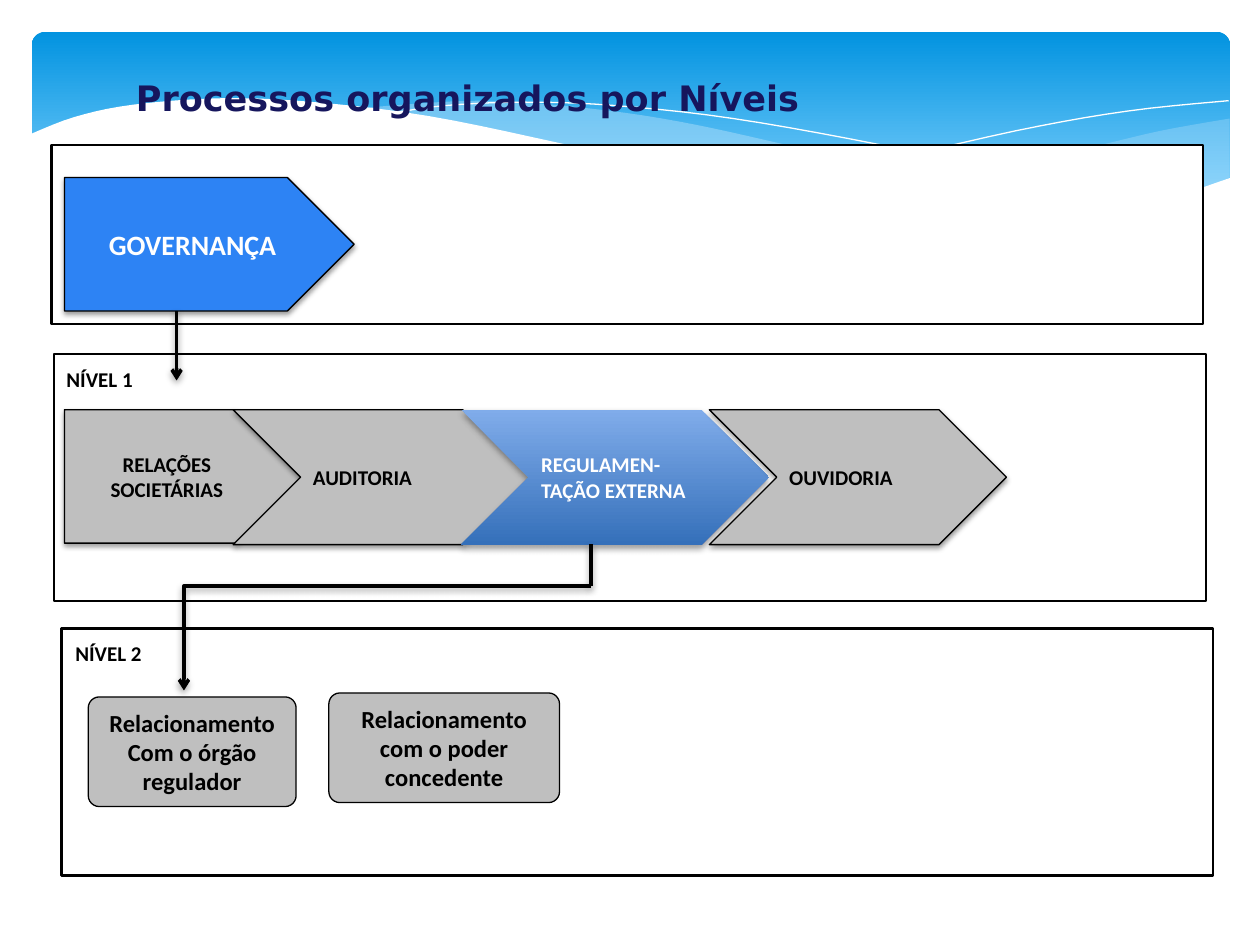
"""Build the slide of processes organised by levels."""
from dataclasses import dataclass
from typing import Optional

import lxml.etree
import pptx
import pptx.dml.color
import pptx.enum.shapes
import pptx.enum.text
import pptx.oxml.ns
import pptx.util

Cm = pptx.util.Cm
Pt = pptx.util.Pt
RGBColor = pptx.dml.color.RGBColor
MSO_SHAPE = pptx.enum.shapes.MSO_SHAPE
MSO_CONNECTOR = pptx.enum.shapes.MSO_CONNECTOR
PP_ALIGN = pptx.enum.text.PP_ALIGN
MSO_ANCHOR = pptx.enum.text.MSO_ANCHOR
qn = pptx.oxml.ns.qn

BLACK = RGBColor(0x00, 0x00, 0x00)
WHITE = RGBColor(0xFF, 0xFF, 0xFF)
GRAY = RGBColor(0xBF, 0xBF, 0xBF)
BLUE = RGBColor(0x2D, 0x83, 0xF4)
NAVY = RGBColor(0x16, 0x16, 0x5D)
FOAM = RGBColor(0xC6, 0xE7, 0xFC)
SKY = (RGBColor(0x02, 0x93, 0xE0), RGBColor(0x83, 0xD3, 0xFE))
STEEL = (RGBColor(0x80, 0xAC, 0xEA), RGBColor(0x35, 0x70, 0xBA))

Point = tuple[float, float]
Box = tuple[float, float, float, float]


@dataclass
class Wave:
    curves: list[list[Point]]
    fill: Optional[RGBColor] = None
    opacity: int = 100
    corners: tuple[Point, ...] = ()


@dataclass
class Block:
    kind: int
    box: Box
    fill: object
    text: str = ""
    size: float = 12
    color: RGBColor = BLACK
    align: int = PP_ALIGN.CENTER
    line: Optional[float] = 0.75
    shadow: Optional[tuple[float, float]] = None
    adj: Optional[float] = None
    stop: float = 1.0


@dataclass
class Label:
    box: Box
    text: str
    size: float = 12
    font: str = "Calibri"
    color: RGBColor = BLACK


@dataclass
class Link:
    start: Point
    end: Point
    arrow: bool = True
    kind: int = MSO_CONNECTOR.STRAIGHT


SOFT = (3.1, 1.6)
DEEP = (4, 2)
PANEL, PLATE, CHEVRON, ROUND = (
    MSO_SHAPE.RECTANGLE, MSO_SHAPE.PENTAGON, MSO_SHAPE.CHEVRON, MSO_SHAPE.ROUNDED_RECTANGLE)

BAND = Block(ROUND, (0.64, 0.64, 24.16, 3.96), SKY, line=None, adj=0.07, stop=0.9)
WAVES = [
    Wave([[(24.79, 2.39), (23.39, 2.64), (21.87, 3), (19.13, 3.63), (16.79, 4.06)],
          [(16.79, 4.06), (18.26, 4.24), (19.84, 4.37), (21.44, 4.34), (22.78, 4.19),
           (23.93, 3.91), (24.79, 3.58)]], FOAM, 29),
    Wave([[(22.68, 4.24), (20.5, 3.91), (17.93, 3.4), (15.98, 2.95), (13.74, 2.46),
           (11.81, 2.18), (9.65, 2.03), (7.26, 2.18)],
          [(7.26, 2.18), (9.19, 2.46), (11.4, 2.95), (14.38, 3.63), (16.51, 4.01),
           (18.69, 4.29), (20.78, 4.39), (22.68, 4.24)]], FOAM, 40),
    Wave([[(7.85, 2.29), (8.97, 2.13), (10.57, 2.06), (12.42, 2.13), (14.78, 2.39),
           (17.65, 2.9), (20.19, 3.45), (23.04, 4.22)]]),
    Wave([[(15.57, 3.84), (17.65, 3.3), (20.47, 2.64), (22.73, 2.24), (24.77, 2.03)]]),
    Wave([[(24.82, 3.58), (23.37, 4.04), (21.59, 4.32), (19.76, 4.32), (17.48, 4.11),
           (14.71, 3.66), (11.35, 2.9), (8.64, 2.34), (6.35, 2.06), (4.5, 1.98),
           (2.69, 2.11), (1.5, 2.36), (0.58, 2.72)]], WHITE,
         corners=((0.58, 5.69), (24.82, 5.69))),
]
BLOCKS = [
    Block(PANEL, (1.04, 2.92, 23.22, 3.61), WHITE, line=1.25),
    Block(PANEL, (1.09, 7.14, 23.22, 4.98), WHITE, line=1.25),
    Block(PANEL, (1.24, 12.67, 23.22, 4.98), WHITE, line=1.25),
    Block(PLATE, (1.3, 3.58, 5.84, 2.69), BLUE, "GOVERNANÇA", 16, WHITE, shadow=SOFT),
    Block(PLATE, (1.3, 8.26, 4.8, 2.69), GRAY, "RELAÇÕES SOCIETÁRIAS", shadow=SOFT),
    Block(CHEVRON, (4.7, 8.26, 5.99, 2.72), GRAY, "AUDITORIA",
          align=PP_ALIGN.LEFT, shadow=SOFT),
    Block(CHEVRON, (9.3, 8.26, 6.2, 2.72), STEEL, "REGULAMEN-TAÇÃO EXTERNA",
          color=WHITE, align=PP_ALIGN.LEFT, line=None, shadow=DEEP),
    Block(CHEVRON, (14.3, 8.26, 5.99, 2.72), GRAY, "OUVIDORIA",
          align=PP_ALIGN.LEFT, shadow=SOFT),
    Block(ROUND, (1.78, 14.05, 4.19, 2.21), GRAY,
          "Relacionamento\nCom o órgão\nregulador", 14, adj=0.1),
    Block(ROUND, (6.63, 13.97, 4.65, 2.21), GRAY,
          "Relacionamento com o poder concedente", 14, adj=0.1),
]
LABELS = [
    Label((2.49, 1.42, 19.99, 1.12), "Processos organizados por Níveis", 20, "DejaVu Sans", NAVY),
    Label((1.09, 7.26, 2.41, 0.76), "NÍVEL 1"),
    Label((1.27, 12.78, 2.41, 0.76), "NÍVEL 2"),
]
LINKS = [
    Link((11.91, 11.81), (3.71, 13.92), kind=MSO_CONNECTOR.ELBOW),
    Link((3.56, 6.27), (3.56, 7.67)),
    Link((11.91, 10.97), (11.91, 11.81), arrow=False),
]


def add_child(parent, tag: str, **attrs):
    """Append a DrawingML element."""
    return lxml.etree.SubElement(parent, qn(tag), {k: str(v) for k, v in attrs.items()})


def add_shadow(effects, blur: float, dist: float) -> None:
    """Put a downward black shadow in an effect list."""
    outer = add_child(effects, "a:outerShdw", blurRad=Pt(blur), dist=Pt(dist),
                      dir=5400000, rotWithShape=0)
    add_child(add_child(outer, "a:srgbClr", val=BLACK), "a:alpha", val=38000)


def smooth(knots: list[Point], steps: int = 5) -> list[Point]:
    """Sample a Catmull-Rom curve through the knots."""
    ends = [knots[0], *knots, knots[-1]]
    points = [knots[0]]
    for a, b, c, d in zip(ends, ends[1:], ends[2:], ends[3:]):
        for t in (i / steps for i in range(1, steps + 1)):
            points.append(tuple(
                (2 * q + (r - p) * t + (2 * p - 5 * q + 4 * r - s) * t ** 2
                 + (3 * q - p - 3 * r + s) * t ** 3) / 2
                for p, q, r, s in zip(a, b, c, d)))
    return points


def draw_wave(s, wave: Wave) -> None:
    """Draw a filled wave, or a white hairline when it has no fill."""
    points = [p for curve in wave.curves for p in smooth(curve)] + list(wave.corners)
    first, *rest = [(Cm(x), Cm(y)) for x, y in points]
    builder = s.shapes.build_freeform(*first)
    builder.add_line_segments(rest, close=wave.fill is not None)
    sp = builder.convert_to_shape()
    sp.shadow.inherit = False
    if wave.fill is None:
        sp.fill.background()
        sp.line.color.rgb = WHITE
        sp.line.width = Pt(0)
        return
    sp.fill.solid()
    sp.fill.fore_color.rgb = wave.fill
    sp.line.fill.background()
    if wave.opacity < 100:
        color = sp.element.spPr.find(qn("a:solidFill")).find(qn("a:srgbClr"))
        add_child(color, "a:alpha", val=wave.opacity * 1000)


def set_text(tf, text: str, size: float, font: str, color: RGBColor, align: int) -> None:
    """Fill a text frame with bold text."""
    tf.word_wrap = True
    tf.text = text
    for p in tf.paragraphs:
        p.alignment = align
        for r in p.runs:
            r.font.size, r.font.name, r.font.bold = Pt(size), font, True
            r.font.color.rgb = color


def draw_block(s, block: Block) -> None:
    """Draw a preset shape with its fill, outline, shadow and text."""
    sp = s.shapes.add_shape(block.kind, *map(Cm, block.box))
    sp.shadow.inherit = False
    if block.adj is not None:
        sp.adjustments[0] = block.adj
    if isinstance(block.fill, RGBColor):
        sp.fill.solid()
        sp.fill.fore_color.rgb = block.fill
    else:
        sp.fill.gradient()
        sp.fill.gradient_angle = 270
        for stop, color, position in zip(sp.fill.gradient_stops, block.fill, (0, block.stop)):
            stop.color.rgb, stop.position = color, position
    if block.line is None:
        sp.line.fill.background()
    else:
        sp.line.color.rgb, sp.line.width = BLACK, Pt(block.line)
    if block.shadow:
        add_shadow(sp.element.spPr.find(qn("a:effectLst")), *block.shadow)
    if block.text:
        sp.text_frame.vertical_anchor = MSO_ANCHOR.MIDDLE
        set_text(sp.text_frame, block.text, block.size, "Calibri", block.color, block.align)


def draw_label(s, label: Label) -> None:
    """Draw a text box."""
    tf = s.shapes.add_textbox(*map(Cm, label.box)).text_frame
    set_text(tf, label.text, label.size, label.font, label.color, PP_ALIGN.LEFT)


def draw_link(s, link: Link) -> None:
    """Draw a connector; an elbow turns only at its far end."""
    cx = s.shapes.add_connector(link.kind, *map(Cm, link.start + link.end))
    cx.line.color.rgb, cx.line.width = BLACK, Pt(2)
    spPr = cx.element.spPr
    if link.kind == MSO_CONNECTOR.ELBOW:
        guides = spPr.find(qn("a:prstGeom")).find(qn("a:avLst"))
        add_child(guides, "a:gd", name="adj1", fmla="val 100000")
    if link.arrow:
        add_child(spPr.find(qn("a:ln")), "a:tailEnd", type="arrow")
    add_shadow(add_child(spPr, "a:effectLst"), *DEEP)


def main() -> None:
    """Build and save the presentation."""
    prs = pptx.Presentation()
    prs.slide_width, prs.slide_height = Cm(25.4), Cm(19.05)
    s = prs.slides.add_slide(prs.slide_layouts[6])
    draw_block(s, BAND)
    for draw, items in ((draw_wave, WAVES), (draw_block, BLOCKS),
                        (draw_label, LABELS), (draw_link, LINKS)):
        for item in items:
            draw(s, item)
    prs.save("out.pptx")


if __name__ == "__main__":
    main()
